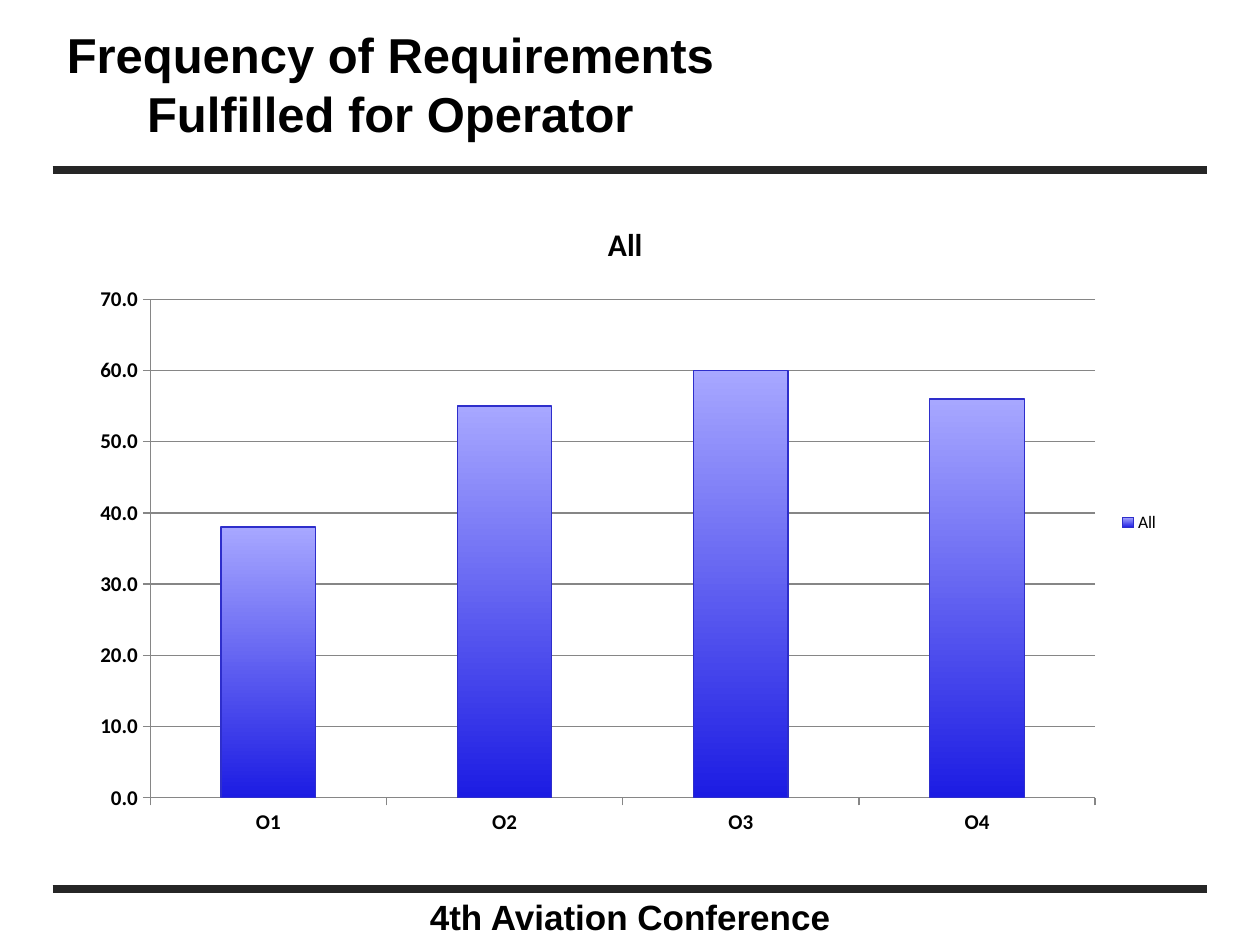
from dataclasses import dataclass

from lxml import etree
from pptx import Presentation
from pptx import util as u
from pptx.chart.data import CategoryChartData
from pptx.dml.color import RGBColor
from pptx.enum import chart as chart_enum, shapes, text
from pptx.oxml.ns import qn

BLACK = "000000"
RULE_COLOR = "262626"
GRID_COLOR = "868686"
BAR_LINE = "2E2ECB"
BAR_GRADIENT = [(0, "1C1CE3"), (1, "A7A7FF")]


@dataclass
class Rule:
    y: float
    left: float = 1.06
    right: float = 24.33
    width: float = 4.5


@dataclass
class Label:
    content: str
    left: float
    top: float
    width: float
    height: float
    size: float
    anchor: text.MSO_ANCHOR


RULES = [Rule(3.43), Rule(17.93)]
LABELS = [
    Label("4th Aviation Conference", 3.6, 17.93, 18.21, 1.04, 20,
          text.MSO_ANCHOR.TOP),
    Label("Frequency of Requirements Fulfilled for Operator",
          1.14, 0.48, 13.46, 2.41, 28, text.MSO_ANCHOR.MIDDLE),
]
FREQUENCIES = {"O1": 38, "O2": 55, "O3": 60, "O4": 56}


def color(value: str) -> RGBColor:
    return RGBColor.from_string(value)


def style_font(font, name: str, size: float, bold: bool) -> None:
    font.name = name
    font.size = u.Pt(size)
    font.bold = bold
    font.color.rgb = color(BLACK)


def style_line(line, value: str, width: float) -> None:
    line.color.rgb = color(value)
    line.width = u.Pt(width)


def draw_rule(slide, rule: Rule) -> None:
    connector = slide.shapes.add_connector(
        shapes.MSO_CONNECTOR.STRAIGHT, u.Cm(rule.left), u.Cm(rule.y),
        u.Cm(rule.right), u.Cm(rule.y))
    style_line(connector.line, RULE_COLOR, rule.width)
    etree.SubElement(connector._element.spPr, qn("a:effectLst"))


def draw_label(slide, label: Label) -> None:
    shape = slide.shapes.add_textbox(
        u.Cm(label.left), u.Cm(label.top), u.Cm(label.width), u.Cm(label.height))
    frame = shape.text_frame
    frame.word_wrap = True
    frame.vertical_anchor = label.anchor
    frame.margin_left = frame.margin_right = u.Cm(0.13)
    frame.margin_top = frame.margin_bottom = u.Cm(0.13)
    frame.text = label.content
    paragraph = frame.paragraphs[0]
    paragraph.alignment = text.PP_ALIGN.CENTER
    style_font(paragraph.runs[0].font, "Arial", label.size, True)


def style_axis(axis) -> None:
    axis.major_tick_mark = chart_enum.XL_TICK_MARK.OUTSIDE
    axis.minor_tick_mark = chart_enum.XL_TICK_MARK.NONE
    style_font(axis.tick_labels.font, "Calibri", 12, True)
    style_line(axis.format.line, GRID_COLOR, 0.75)


def draw_chart(slide) -> None:
    data = CategoryChartData(number_format="###0.0")
    data.categories = list(FREQUENCIES)
    data.add_series("All", list(FREQUENCIES.values()))
    chart = slide.shapes.add_chart(
        chart_enum.XL_CHART_TYPE.COLUMN_CLUSTERED,
        u.Cm(1.58), u.Cm(3.97), u.Cm(22.05), u.Cm(13.13), data).chart
    style_font(chart.font, "Calibri", 10, False)

    # Title and legend
    chart.has_title = True
    frame = chart.chart_title.text_frame
    frame.text = "All"
    style_font(frame.paragraphs[0].runs[0].font, "Calibri", 18, True)
    chart.chart_title.include_in_layout = False
    chart.has_legend = True
    chart.legend.position = chart_enum.XL_LEGEND_POSITION.RIGHT
    chart.legend.include_in_layout = False

    # Axes
    style_axis(chart.category_axis)
    value_axis = chart.value_axis
    style_axis(value_axis)
    value_axis.minimum_scale, value_axis.maximum_scale = 0, 70
    value_axis.major_unit = 10
    value_axis.has_major_gridlines = True
    style_line(value_axis.major_gridlines.format.line, GRID_COLOR, 0.75)
    value_axis.tick_labels.number_format = "###0.0"
    value_axis.tick_labels.number_format_is_linked = False

    # Bars
    plot = chart.plots[0]
    plot.vary_by_categories = False
    plot.gap_width = 150
    bars = plot.series[0].format
    bars.fill.gradient()
    bars.fill.gradient_angle = 90
    for stop, (position, value) in zip(bars.fill.gradient_stops, BAR_GRADIENT):
        stop.position = position
        stop.color.rgb = color(value)
    style_line(bars.line, BAR_LINE, 0.75)


def main() -> None:
    presentation = Presentation()
    presentation.slide_width = u.Cm(25.4)
    presentation.slide_height = u.Cm(19.05)
    slide = presentation.slides.add_slide(presentation.slide_layouts[6])
    for rule in RULES:
        draw_rule(slide, rule)
    for label in LABELS:
        draw_label(slide, label)
    draw_chart(slide)
    presentation.save("out.pptx")


if __name__ == "__main__":
    main()
